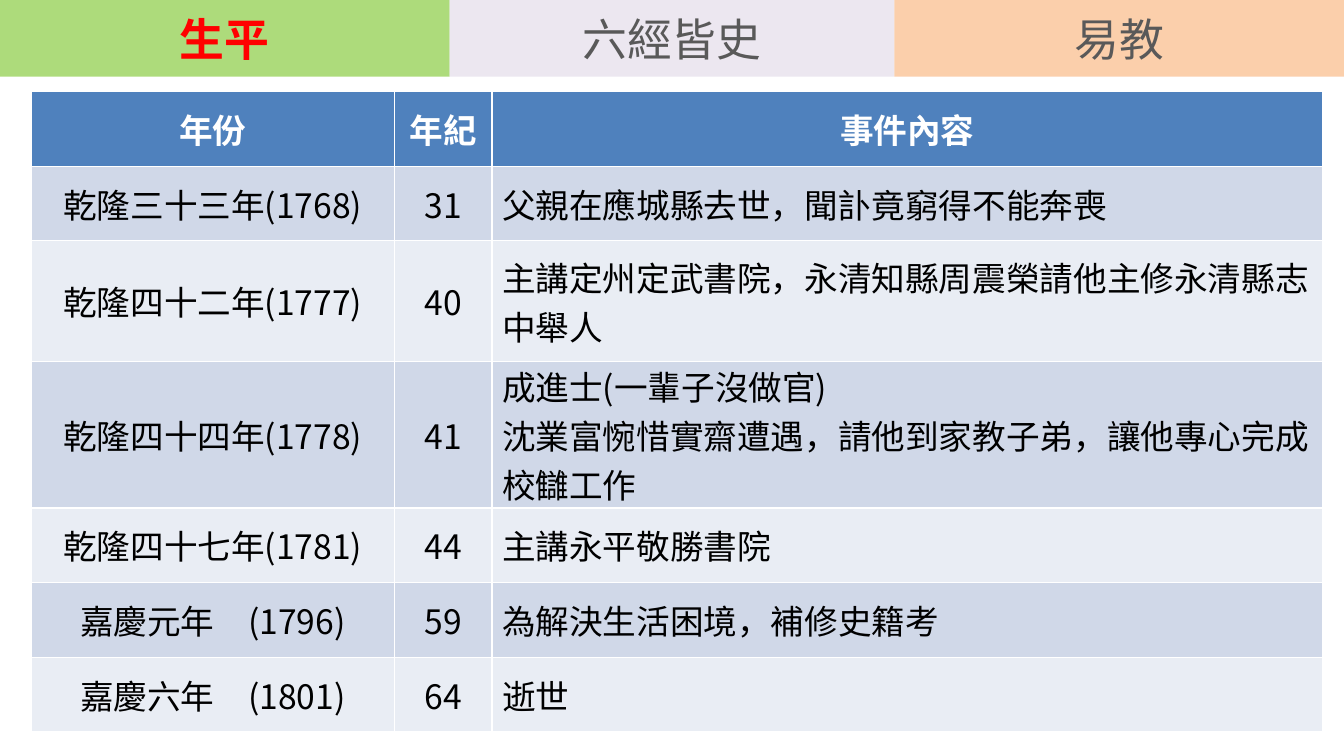
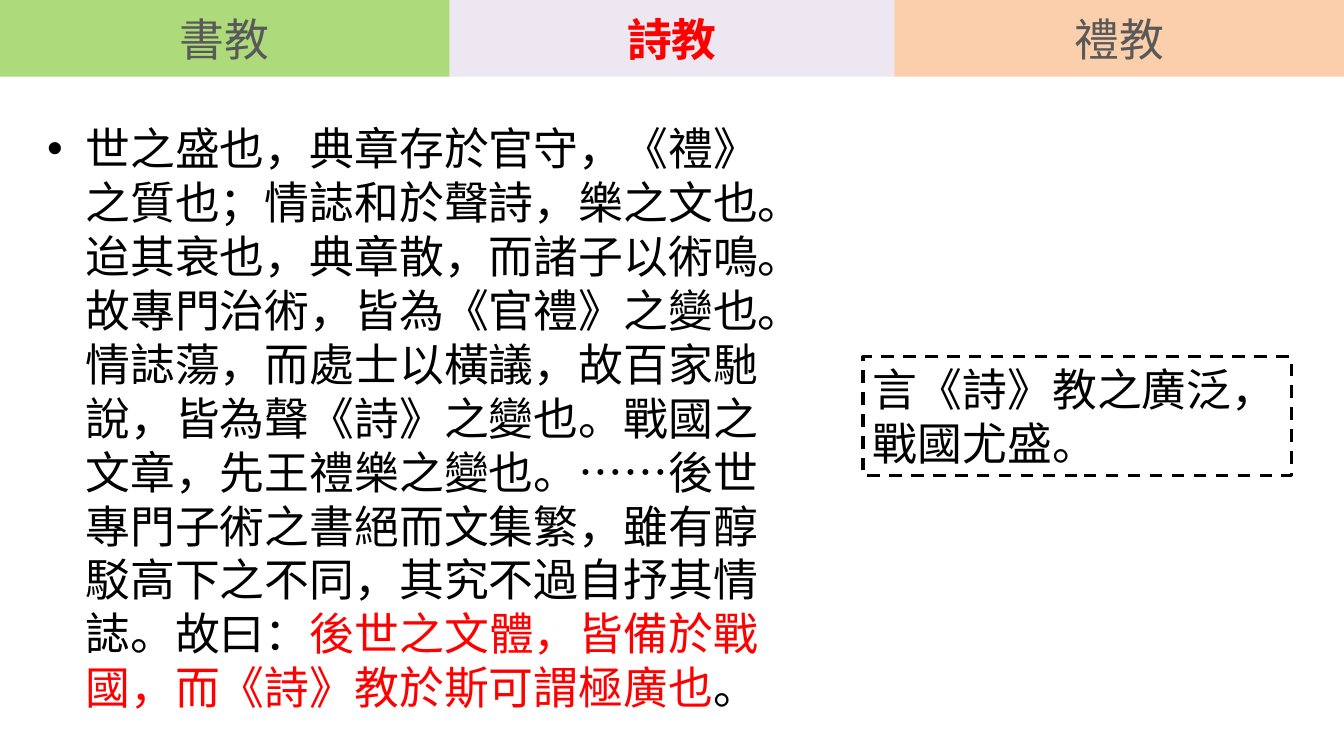
from lxml import etree
from pptx import Presentation
from pptx import util as u
from pptx.dml.color import RGBColor
from pptx.enum import dml, shapes, text
from pptx.oxml import ns

COLORS = {
    "green": "92D050", "lilac": "E6E0EC", "peach": "FAC090",
    "grey": "595959", "red": "FF0000", "black": "000000", "white": "FFFFFF",
    "header": "4F81BD", "band_dark": "D0D8E8", "band_light": "E9EDF4",
}
CJK = "Noto Sans CJK SC"
SLIDE_WIDTH, SLIDE_HEIGHT = 13.33, 7.5
TAB_HEIGHT = 0.76
TAB_STYLES = [("green", 4.46), ("lilac", 4.41), ("peach", 4.46)]

LIFE_TABS = ["生平", "六經皆史", "易教"]
POETRY_TABS = ["書教", "詩教", "禮教"]

COLUMN_WIDTHS = [3.6, 0.97, 8.24]
ROW_HEIGHTS = [0.74, 0.74, 1.2, 1.42, 0.74, 0.74, 0.74]
LIFE_EVENTS = [
    ("年份", "年紀", "事件內容"),
    ("乾隆三十三年(1768)", "31", "父親在應城縣去世，聞訃竟窮得不能奔喪"),
    ("乾隆四十二年(1777)", "40",
     "主講定州定武書院，永清知縣周震榮請他主修永清縣志\n中舉人"),
    ("乾隆四十四年(1778)", "41",
     "成進士(一輩子沒做官)\n"
     "沈業富惋惜實齋遭遇，請他到家教子弟，讓他專心完成校讎工作"),
    ("乾隆四十七年(1781)", "44", "主講永平敬勝書院"),
    ("嘉慶元年　(1796)", "59", "為解決生活困境，補修史籍考"),
    ("嘉慶六年　(1801)", "64", "逝世"),
]

PASSAGE = [
    ("世之盛也，典章存於官守，《禮》之質也；情誌和於聲詩，樂之文也。"
     "迨其衰也，典章散，而諸子以術鳴。故專門治術，皆為《官禮》之變也。"
     "情誌蕩，而處士以橫議，故百家馳說，皆為聲《詩》之變也。"
     "戰國之文章，先王禮樂之變也。……後世專門子術之書絕而文集繁，"
     "雖有醇駁高下之不同，其究不過自抒其情誌。故曰：", "black"),
    ("後世之文體，皆備於戰國，而《詩》教於斯可謂極廣也", "red"),
    ("。", "black"),
]
REMARK = "言《詩》教之廣泛，戰國尤盛。"
PASSAGE_LINE = u.Pt(38.5)


def rgb(name):
    return RGBColor.from_string(COLORS[name])


def add_element(parent, tag, **attributes):
    return etree.SubElement(parent, ns.qn(tag), attributes)


def style_font(font, size, color=None, bold=False, name=CJK):
    font.size, font.bold, font.name = u.Pt(size), bold, name
    if name == CJK:
        add_element(font._rPr, "a:ea", typeface=name)
    if color:
        font.color.rgb = rgb(color)


def add_rectangle(slide, left, top, width, height):
    box = slide.shapes.add_shape(
        shapes.MSO_SHAPE.RECTANGLE, *map(u.Inches, (left, top, width, height)))
    box.shadow.inherit = False
    return box


def add_tabs(slide, labels, active):
    """Draw the navigation band with the active label in bold red."""
    left = 0
    for label, (color, width) in zip(labels, TAB_STYLES):
        tab = add_rectangle(slide, left, 0, width, TAB_HEIGHT)
        tab.fill.solid()
        tab.fill.fore_color.rgb = rgb(color)
        fill_color = tab._element.spPr.find(ns.qn("a:solidFill"))[0]
        add_element(fill_color, "a:alpha", val="75000")
        tab.line.fill.background()
        tab.text_frame.vertical_anchor = text.MSO_ANCHOR.MIDDLE
        para = tab.text_frame.paragraphs[0]
        para.text = label
        para.alignment = text.PP_ALIGN.CENTER
        current = label == active
        style_font(para.font, 32, "red" if current else "grey", current)
        para.runs[0].font.color.rgb = rgb("red" if current else "grey")
        left += width


def add_events_table(slide):
    table = slide.shapes.add_table(
        len(LIFE_EVENTS), len(COLUMN_WIDTHS), u.Inches(0.31), u.Inches(0.91),
        u.Inches(sum(COLUMN_WIDTHS)), u.Inches(sum(ROW_HEIGHTS))).table
    for column, width in zip(table.columns, COLUMN_WIDTHS):
        column.width = u.Inches(width)
    for row, height in zip(table.rows, ROW_HEIGHTS):
        row.height = u.Inches(height)

    for row_index, event in enumerate(LIFE_EVENTS):
        heading = row_index == 0
        band = "band_dark" if row_index % 2 else "band_light"
        for column_index, words in enumerate(event):
            cell = table.cell(row_index, column_index)
            cell.text = words
            cell.fill.solid()
            cell.fill.fore_color.rgb = rgb("header" if heading else band)
            cell.vertical_anchor = text.MSO_ANCHOR.MIDDLE
            cell.margin_top = cell.margin_bottom = 0
            centred = heading or column_index < 2
            for para in cell.text_frame.paragraphs:
                para.alignment = (text.PP_ALIGN.CENTER if centred
                                  else text.PP_ALIGN.LEFT)
                style_font(para.font, 24, "white" if heading else "black",
                           heading)


def add_passage(slide):
    box = slide.shapes.add_textbox(
        *map(u.Inches, (0.37, 1.07, 7.56, 6.14)))
    frame = box.text_frame
    frame.word_wrap = True
    frame.vertical_anchor = text.MSO_ANCHOR.MIDDLE
    para = frame.paragraphs[0]
    para.line_spacing = PASSAGE_LINE
    properties = para._p.get_or_add_pPr()
    indent = u.Inches(0.38)
    properties.set("marL", str(indent))
    properties.set("indent", str(-indent))
    add_element(properties, "a:buFont", typeface="Arial")
    add_element(properties, "a:buChar", char="•")
    style_font(para.font, 32)
    for words, color in PASSAGE:
        span = para.add_run()
        span.text = words
        span.font.color.rgb = rgb(color)


def add_remark(slide):
    box = add_rectangle(slide, 8.56, 3.54, 4.25, 1.18)
    box.fill.background()
    box.line.color.rgb = rgb("black")
    box.line.width = u.Pt(2.25)
    box.line.dash_style = dml.MSO_LINE.DASH
    frame = box.text_frame
    frame.word_wrap = True
    frame.vertical_anchor = text.MSO_ANCHOR.TOP
    para = frame.paragraphs[0]
    para.text = REMARK
    para.alignment = text.PP_ALIGN.LEFT
    para.line_spacing = PASSAGE_LINE
    style_font(para.font, 32, "black", name="Arial")
    para.runs[0].font.color.rgb = rgb("black")


def main():
    deck = Presentation()
    deck.slide_width = u.Inches(SLIDE_WIDTH)
    deck.slide_height = u.Inches(SLIDE_HEIGHT)
    blank = deck.slide_layouts[6]

    life = deck.slides.add_slide(blank)
    add_tabs(life, LIFE_TABS, "生平")
    add_events_table(life)

    poetry = deck.slides.add_slide(blank)
    add_passage(poetry)
    add_tabs(poetry, POETRY_TABS, "詩教")
    add_remark(poetry)

    deck.save("out.pptx")


if __name__ == "__main__":
    main()
